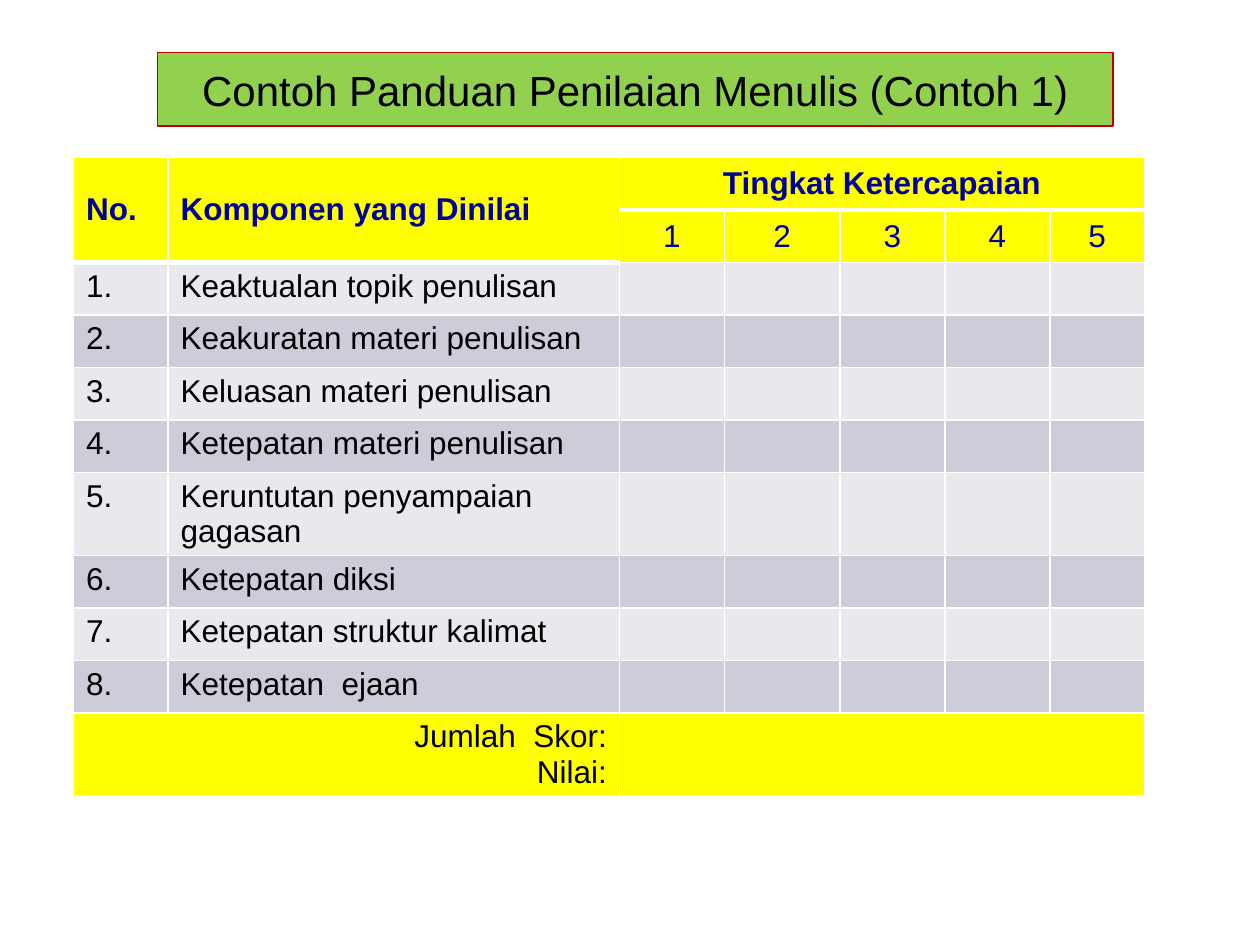
from lxml import etree
from pptx import Presentation
from pptx import util as u
from pptx.dml.color import RGBColor
from pptx.enum import shapes, text
from pptx.oxml import ns

PX = 7620  # 120 px to the inch
BLACK = RGBColor(0x00, 0x00, 0x00)
NAVY = RGBColor(0x00, 0x00, 0x99)
YELLOW = RGBColor(0xFF, 0xFF, 0x00)
GREEN = RGBColor(0x92, 0xD0, 0x50)
RED = RGBColor(0xC0, 0x00, 0x00)
BANDS = [RGBColor(0xE8, 0xE8, 0xED), RGBColor(0xCD, 0xCD, 0xDA)]
LEFT, CENTER, RIGHT = text.PP_ALIGN.LEFT, text.PP_ALIGN.CENTER, text.PP_ALIGN.RIGHT

COLUMN_WIDTHS = [90, 430, 100, 110, 100, 100, 90]
ROW_HEIGHT = 50
COMPONENTS = [
    "Keaktualan topik penulisan",
    "Keakuratan materi penulisan",
    "Keluasan materi penulisan",
    "Ketepatan materi penulisan",
    "Keruntutan penyampaian gagasan",
    "Ketepatan diksi",
    "Ketepatan struktur kalimat",
    "Ketepatan  ejaan",
]


def write(frame, lines, align=LEFT, color=BLACK, size=18, bold=False):
    """Put each line in its own paragraph of the frame."""
    for index, line in enumerate(lines):
        paragraph = frame.paragraphs[0] if index == 0 else frame.add_paragraph()
        paragraph.alignment = align
        run = paragraph.add_run()
        run.text = line
        run.font.name = "Arial"
        run.font.size = u.Pt(size)
        run.font.bold = bold
        run.font.color.rgb = color


def border_header(cell):
    """Give the cell thin white borders and a thick one below."""
    properties = cell._tc.get_or_add_tcPr()
    for position, (side, points) in enumerate([("L", 1), ("R", 1), ("T", 1), ("B", 3)]):
        line = etree.Element(ns.qn(f"a:ln{side}"), w=str(u.Pt(points)))
        fill = etree.SubElement(line, ns.qn("a:solidFill"))
        etree.SubElement(fill, ns.qn("a:srgbClr"), val="FFFFFF")
        properties.insert(position, line)


presentation = Presentation()
presentation.slide_width = 1200 * PX
presentation.slide_height = 900 * PX
slide = presentation.slides.add_slide(presentation.slide_layouts[6])

title = slide.shapes.add_shape(
    shapes.MSO_SHAPE.RECTANGLE, 150 * PX, 50 * PX, 910 * PX, 70 * PX)
title.shadow.inherit = False
title.fill.solid()
title.fill.fore_color.rgb = GREEN
title.line.color.rgb = RED
title.line.width = u.Pt(0.75)
title.text_frame.word_wrap = True
title.text_frame.vertical_anchor = text.MSO_ANCHOR.MIDDLE
write(title.text_frame, ["Contoh Panduan Penilaian Menulis (Contoh 1)"], CENTER, size=24)

row_count = len(COMPONENTS) + 3
last = row_count - 1
table = slide.shapes.add_table(
    row_count, len(COLUMN_WIDTHS), 70 * PX, 150 * PX,
    sum(COLUMN_WIDTHS) * PX, row_count * ROW_HEIGHT * PX).table
for column, width in zip(table.columns, COLUMN_WIDTHS):
    column.width = width * PX

for row in range(row_count):
    for column in range(len(COLUMN_WIDTHS)):
        cell = table.cell(row, column)
        cell.fill.solid()
        cell.fill.fore_color.rgb = YELLOW if row in (0, 1, last) else BANDS[row % 2]

# Header
for column, label, end, align in [
    (0, "No.", (1, 0), LEFT),
    (1, "Komponen yang Dinilai", (1, 1), LEFT),
    (2, "Tingkat Ketercapaian", (0, 6), CENTER),
]:
    cell = table.cell(0, column)
    cell.merge(table.cell(*end))
    cell.vertical_anchor = text.MSO_ANCHOR.MIDDLE
    border_header(cell)
    write(cell.text_frame, [label], align, NAVY, bold=True)

for level in range(1, 6):
    cell = table.cell(1, level + 1)
    cell.vertical_anchor = text.MSO_ANCHOR.MIDDLE
    write(cell.text_frame, [str(level)], CENTER, NAVY)

# Components
for number, component in enumerate(COMPONENTS, 1):
    write(table.cell(number + 1, 0).text_frame, [f"{number}."])
    write(table.cell(number + 1, 1).text_frame, [component])

# Total
table.cell(last, 0).merge(table.cell(last, 1))
table.cell(last, 2).merge(table.cell(last, 6))
write(table.cell(last, 0).text_frame, ["Jumlah  Skor:", "Nilai:"], RIGHT)

presentation.save("out.pptx")
